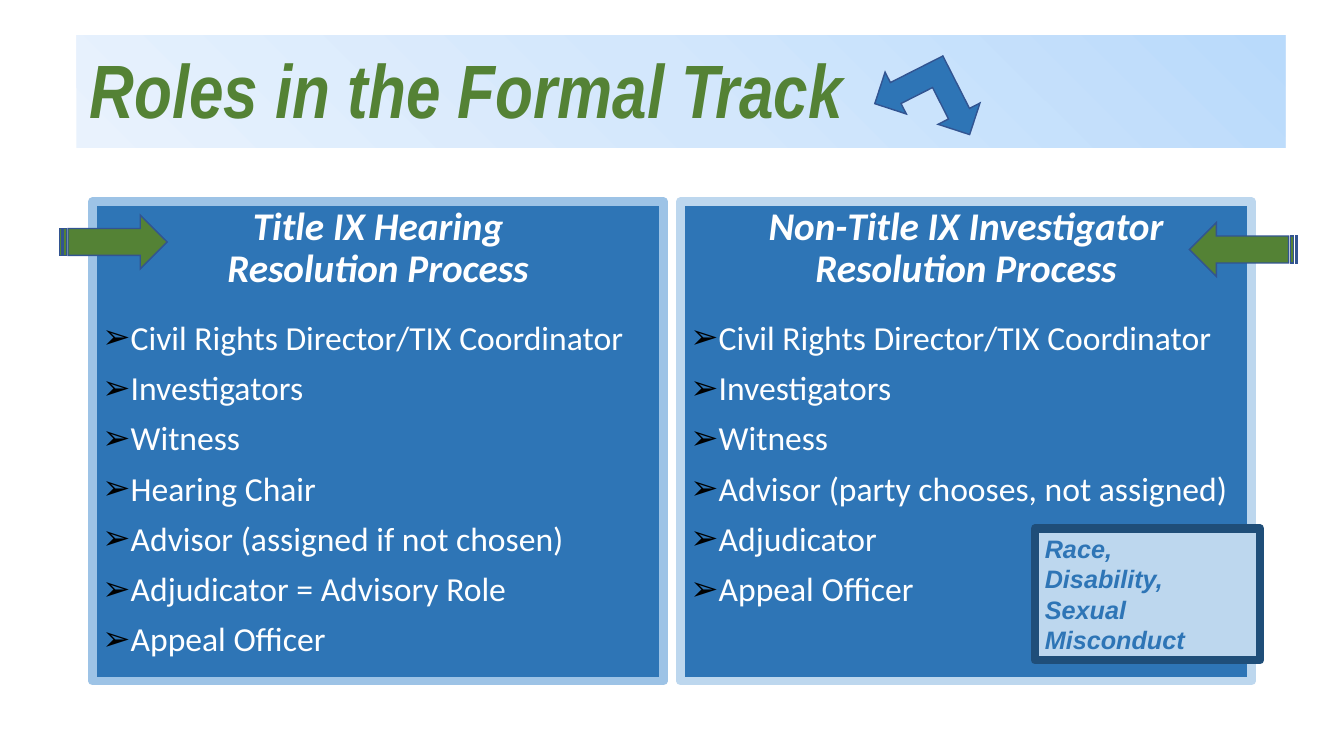
from lxml.etree import SubElement
from pptx import Presentation
from pptx.dml.color import RGBColor
from pptx.enum.shapes import MSO_SHAPE as Preset
from pptx.enum.text import MSO_ANCHOR as Anchor, MSO_AUTO_SIZE as AutoSize, PP_ALIGN as Align
from pptx.oxml import parse_xml
from pptx.oxml.ns import nsdecls, qn
from pptx.util import Inches, Pt

WHITE = RGBColor(0xFF, 0xFF, 0xFF)
BLACK = RGBColor(0x00, 0x00, 0x00)
BLUE = RGBColor(0x2E, 0x75, 0xB6)
NAVY = RGBColor(0x1F, 0x4E, 0x79)
EDGE = RGBColor(0x32, 0x54, 0x91)
SKY = RGBColor(0x9D, 0xC3, 0xE6)
PALE = RGBColor(0xBD, 0xD7, 0xEE)
GREEN = RGBColor(0x54, 0x82, 0x35)
BANNER_STOPS = {
    0: RGBColor(0xB9, 0xDA, 0xFB),
    50: RGBColor(0xD3, 0xE7, 0xFC),
    100: RGBColor(0xE9, 0xF2, 0xFD),
}

COLUMNS, ROWS = 160, 90
EMPHASIS = {"bold": True, "italic": True}
TITLE = {"name": "Arial Narrow", "size": Pt(54), **EMPHASIS}
HEADING = {"name": "Calibri", "size": Pt(28), **EMPHASIS}
ROLE = {"name": "Calibri", "size": Pt(24), "bold": False, "italic": False}
NOTE = {"name": "Arial", "size": Pt(18), **EMPHASIS}


class RolesSlide:
    def __init__(self, deck):
        self.slide = deck.slides.add_slide(deck.slide_layouts[3])
        self.column = deck.slide_width / COLUMNS
        self.row = deck.slide_height / ROWS

    def box(self, left, top, width, height):
        return [round(cells * unit) for cells, unit in zip(
            (left, top, width, height), (self.column, self.row) * 2)]

    def place(self, index, cells):
        holder = self.slide.placeholders[index]
        holder.left, holder.top, holder.width, holder.height = self.box(*cells)
        holder.text_frame.auto_size = AutoSize.NONE
        return holder

    def paint(self, shape, fill, edge, weight):
        shape.fill.solid()
        shape.fill.fore_color.rgb = fill
        shape.line.color.rgb = edge
        shape.line.width = Pt(weight)

    def add_text(self, paragraph, text, style, color, **layout):
        for key, value in layout.items():
            setattr(paragraph, key, value)
        run = paragraph.add_run()
        run.text = text
        for key, value in style.items():
            setattr(run.font, key, value)
        run.font.color.rgb = color

    def next_paragraph(self, frame, position):
        return frame.add_paragraph() if position else frame.paragraphs[0]

    def mark(self, paragraph, bullet):
        properties = paragraph._p.get_or_add_pPr()
        properties.set("marL", str(Inches(0.25) if bullet else 0))
        properties.set("indent", str(-Inches(0.25) if bullet else 0))
        if not bullet:
            SubElement(properties, qn("a:buNone"))
            return
        tint = SubElement(properties, qn("a:buClr"))
        SubElement(tint, qn("a:srgbClr"), val=str(BLACK))
        SubElement(properties, qn("a:buFont"), typeface="Arial")
        SubElement(properties, qn("a:buChar"), char=bullet)

    def banner(self, text, cells):
        banner = self.place(0, cells)
        stops = "".join(
            f'<a:gs pos="{share * 1000}"><a:srgbClr val="{color}"/></a:gs>'
            for share, color in BANNER_STOPS.items())
        banner._element.spPr.append(parse_xml(
            f'<a:gradFill {nsdecls("a")} rotWithShape="1"><a:gsLst>{stops}</a:gsLst>'
            '<a:path path="circle"><a:fillToRect l="100000" b="100000"/></a:path>'
            '</a:gradFill>'))
        frame = banner.text_frame
        frame.vertical_anchor = Anchor.BOTTOM
        for side in ("left", "top", "right", "bottom"):
            setattr(frame, f"margin_{side}", Inches(0.13))
        self.add_text(frame.paragraphs[0], text, TITLE, GREEN,
                      alignment=Align.LEFT, line_spacing=0.9)

    def panel(self, index, cells, edge, heading, roles):
        panel = self.place(index, cells)
        self.paint(panel, BLUE, edge, 6)
        frame = panel.text_frame
        frame.vertical_anchor = Anchor.TOP
        for position, line in enumerate(heading):
            paragraph = self.next_paragraph(frame, position)
            self.mark(paragraph, None)
            self.add_text(paragraph, line, HEADING, WHITE, alignment=Align.CENTER,
                          line_spacing=0.9, space_before=Pt(0))
        for position, role in enumerate(roles):
            paragraph = frame.add_paragraph()
            self.mark(paragraph, "➢")
            self.add_text(paragraph, role, ROLE, WHITE, alignment=Align.LEFT,
                          line_spacing=0.9, space_before=Pt(10 if position else 21.3))

    def arrow(self, preset, cells, fill, rotation=0):
        arrow = self.slide.shapes.add_shape(preset, *self.box(*cells))
        arrow.shadow.inherit = False
        arrow.rotation = rotation
        self.paint(arrow, fill, EDGE, 1)
        SubElement(arrow.line._get_or_add_ln(), qn("a:miter"), lim="800000")

    def note(self, cells, lines):
        note = self.slide.shapes.add_textbox(*self.box(*cells))
        self.paint(note, PALE, NAVY, 6)
        frame = note.text_frame
        frame.word_wrap = True
        frame.auto_size = AutoSize.SHAPE_TO_FIT_TEXT
        for position, line in enumerate(lines):
            self.add_text(self.next_paragraph(frame, position), line, NOTE, BLUE)


def main():
    deck = Presentation()
    deck.slide_width, deck.slide_height = Inches(13.33), Inches(7.5)
    roles = RolesSlide(deck)
    shared = ["Civil Rights Director/TIX Coordinator", "Investigators", "Witness"]
    roles.banner("Roles in the Formal Track", (9.1, 4.2, 143.9, 13.4))
    roles.panel(1, (11, 24, 68, 57.1), SKY,
                ["Title IX Hearing", "Resolution Process"],
                shared + ["Hearing Chair", "Advisor (assigned if not chosen)",
                          "Adjudicator = Advisory Role", "Appeal Officer"])
    roles.panel(2, (81, 24, 68, 57.1), PALE,
                ["Non-Title IX Investigator Resolution Process"],
                shared + ["Advisor (party chooses, not assigned)",
                          "Adjudicator", "Appeal Officer"])
    roles.arrow(Preset.STRIPED_RIGHT_ARROW, (7.1, 25.6, 12.8, 6.4), GREEN)
    roles.arrow(Preset.STRIPED_RIGHT_ARROW, (141.6, 26.5, 12.8, 6.4), GREEN, 180)
    roles.arrow(Preset.LEFT_UP_ARROW, (104.8, 6.7, 11.2, 11.2), BLUE, 243.1)
    roles.note((123.2, 62.9, 26.8, 15.7), ["Race,", "Disability, Sexual Misconduct"])
    deck.save("out.pptx")


if __name__ == "__main__":
    main()
